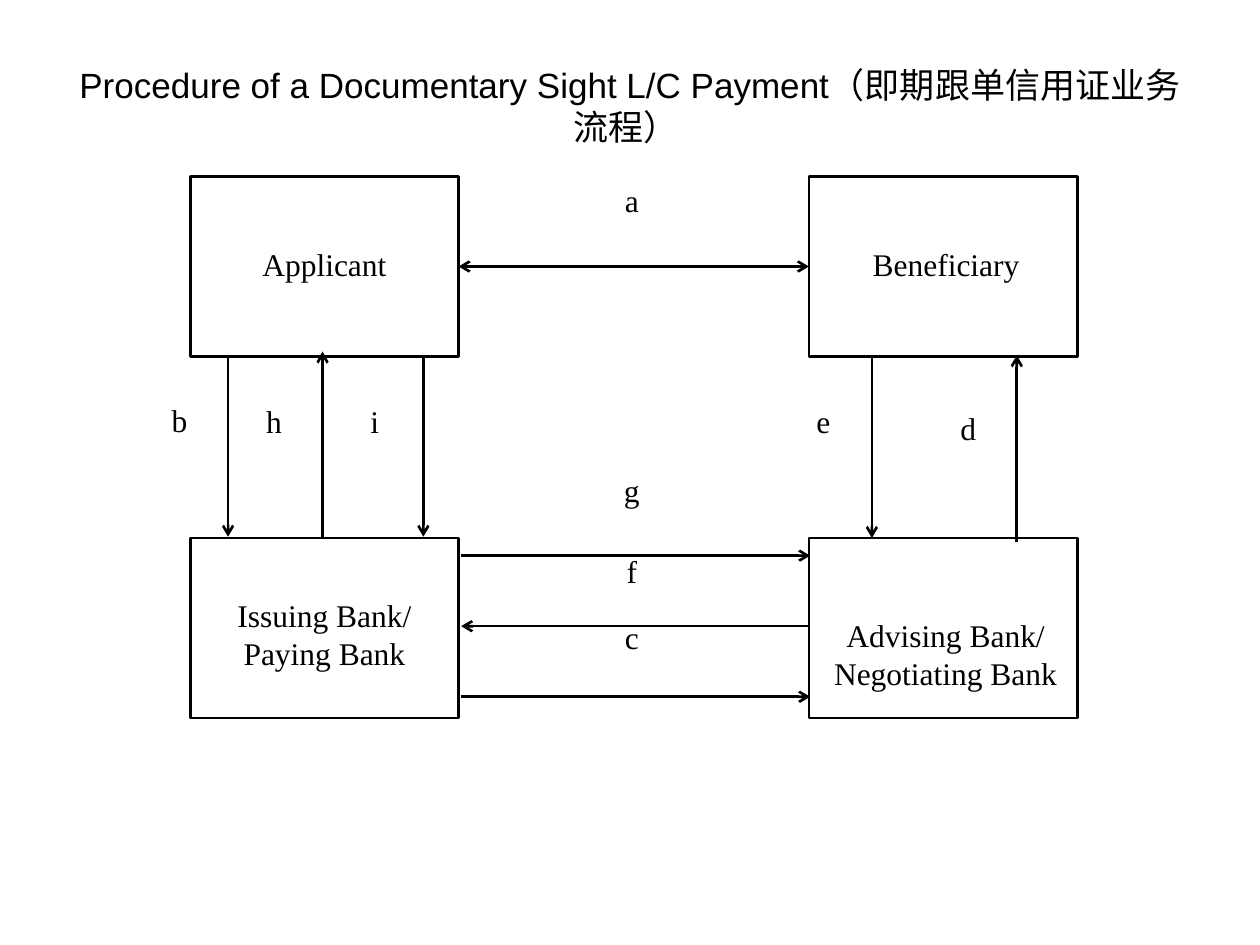
from lxml import etree
from pptx import Presentation
from pptx import util as u
from pptx.dml.color import RGBColor
from pptx.enum import shapes, text
from pptx.oxml.ns import qn

BLACK = RGBColor(0, 0, 0)
TITLE = "Procedure of a Documentary Sight L/C Payment（即期跟单信用证业务流程） "
COLUMNS = (1.51, 6.42)
ROWS = (1.4, 4.27)
PARTY_W, PARTY_H = 2.13, 1.43
LABEL_SIZE = 0.77
LABEL_LEFT = 4.63

# party: column, row, then left, top, width, height of its caption
PARTIES = {
    "Applicant": (0, 0, 1.63, 1.76, 1.89, 0.67),
    "Beneficiary": (1, 0, 6.56, 1.76, 1.9, 0.67),
    "Issuing Bank/\nPaying Bank": (0, 1, 1.63, 4.46, 1.89, 1.14),
    "Advising Bank/\nNegotiating Bank": (1, 1, 6.56, 4.66, 1.89, 1.06),
}
# step: x, start y, end y, label top
VERTICAL_STEPS = {
    "b": (1.81, 2.82, 4.26, 3.13),
    "h": (2.56, 4.27, 2.79, 3.14),
    "i": (3.36, 2.82, 4.26, 3.14),
    "e": (6.92, 2.83, 4.27, 3.14),
    "d": (8.07, 4.3, 2.82, 3.2),
}
# step: y, start x, end x, label top
HORIZONTAL_STEPS = {
    "a": (2.12, 3.64, 6.42, 1.39),
    "g": (4.41, 3.66, 6.43, 3.69),
    "f": (4.97, 6.43, 3.66, 4.33),
    "c": (5.53, 3.66, 6.43, 4.86),
}


def add_text(slide, words, left, top, width, height, size=18,
             font="Times New Roman", anchor=text.MSO_ANCHOR.MIDDLE, inset=0.0):
    box = slide.shapes.add_textbox(*map(u.Inches, (left, top, width, height)))
    frame = box.text_frame
    frame.word_wrap = True
    frame.vertical_anchor = anchor
    frame.margin_left = frame.margin_right = u.Inches(inset)
    frame.margin_top = frame.margin_bottom = u.Inches(inset / 2)
    frame.text = words
    for paragraph in frame.paragraphs:
        paragraph.alignment = text.PP_ALIGN.CENTER
        for run in paragraph.runs:
            run.font.size = u.Pt(size)
            run.font.name = font
            run.font.color.rgb = BLACK


def add_label(slide, step, left, top):
    add_text(slide, step, left, top, LABEL_SIZE, LABEL_SIZE,
             anchor=text.MSO_ANCHOR.TOP, inset=0.1)


def add_arrow(slide, x1, y1, x2, y2, ends=("tailEnd",)):
    arrow = slide.shapes.add_connector(
        shapes.MSO_CONNECTOR.STRAIGHT, *map(u.Inches, (x1, y1, x2, y2)))
    arrow.line.color.rgb = BLACK
    arrow.line.width = u.Pt(1.5)
    line = arrow.line._get_or_add_ln()
    for end in ends:
        etree.SubElement(line, qn(f"a:{end}"), type="arrow")
    etree.SubElement(arrow._element.spPr, qn("a:effectLst"))
    return arrow


def add_party(slide, column, row):
    party = slide.shapes.add_shape(
        shapes.MSO_SHAPE.RECTANGLE,
        *map(u.Inches, (COLUMNS[column], ROWS[row], PARTY_W, PARTY_H)))
    party.shadow.inherit = False
    party.fill.background()
    party.line.color.rgb = BLACK
    party.line.width = u.Pt(1.5)
    return party


def main():
    deck = Presentation()
    deck.slide_width, deck.slide_height = u.Inches(10), u.Inches(7.5)
    slide = deck.slides.add_slide(deck.slide_layouts[6])

    add_text(slide, TITLE, 0.5, 0.21, 9, 1.25, size=20, font="Arial", inset=0.1)

    parties = {}
    for name, (column, row, *caption) in PARTIES.items():
        parties[name] = add_party(slide, column, row)
        add_text(slide, name, *caption)

    for step, (x, start, end, label_top) in VERTICAL_STEPS.items():
        add_arrow(slide, x, start, x, end)
        add_label(slide, step, x - LABEL_SIZE, label_top)

    for step, (y, start, end, label_top) in HORIZONTAL_STEPS.items():
        two_way = step == "a"
        ends = ("headEnd", "tailEnd") if two_way else ("tailEnd",)
        arrow = add_arrow(slide, start, y, end, y, ends)
        if two_way:
            arrow.begin_connect(parties["Applicant"], 3)
            arrow.end_connect(parties["Beneficiary"], 1)
        add_label(slide, step, LABEL_LEFT, label_top)

    deck.save("out.pptx")


if __name__ == "__main__":
    main()
